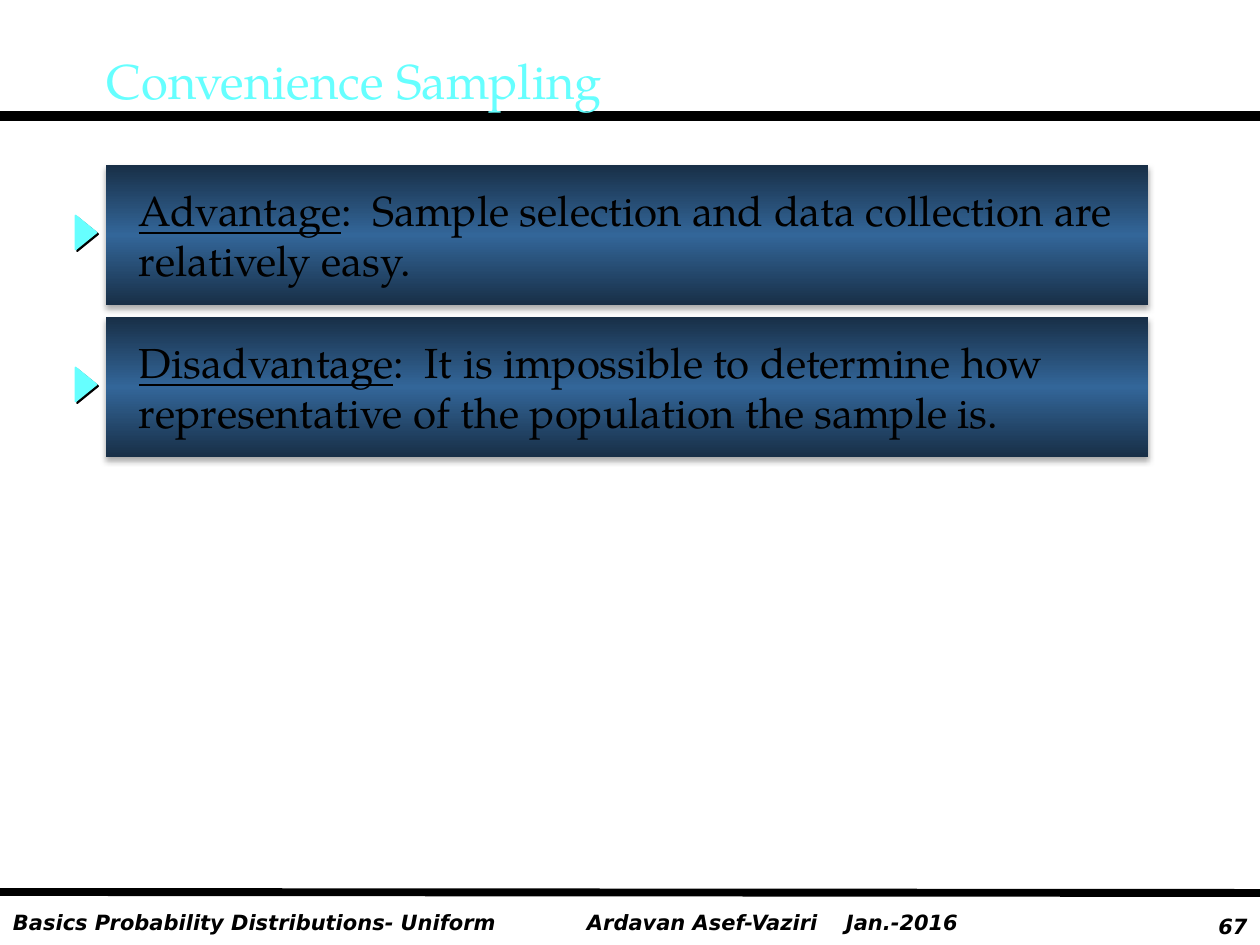
from copy import deepcopy
from dataclasses import dataclass

from lxml.etree import SubElement
from pptx import Presentation
from pptx.dml.color import RGBColor
from pptx.enum.shapes import MSO_CONNECTOR, MSO_SHAPE
from pptx.enum.text import MSO_ANCHOR, PP_ALIGN
from pptx.oxml.ns import qn
from pptx.util import Emu, Pt

WIDE, HIGH = 1260, 945


def px(count):
    return Emu(round(count * 914400 / 126))


@dataclass(frozen=True)
class Theme:
    black: str = "000000"
    cyan: str = "66FFFF"
    blue: str = "336699"
    navy: str = "182F47"
    serif: str = "TeX Gyre Pagella"
    sans: str = "DejaVu Sans"
    title: int = 28
    body: int = 24
    foot: int = 12


def write(frame, *parts, font, size, color, bold=False, align=PP_ALIGN.LEFT,
          anchor=MSO_ANCHOR.TOP, left=13, tab=None):
    """Fill a frame with one paragraph; a part is text or (text, underline)."""
    frame.word_wrap = True
    frame.vertical_anchor = anchor
    frame.margin_left = px(left)
    para = frame.paragraphs[0]
    para.alignment = align
    if tab:
        stops = SubElement(para._p.get_or_add_pPr(), qn("a:tabLst"))
        SubElement(stops, qn("a:tab"), pos=str(px(tab)), algn="l")
    for part in parts:
        text, under = (part, False) if isinstance(part, str) else part
        run = para.add_run()
        run.text = text
        face = run.font
        face.name, face.size = font, Pt(size)
        face.bold = face.italic = bold
        face.underline = under
        face.color.rgb = RGBColor.from_string(color)


class Deck:
    def __init__(self, theme):
        self.theme = theme
        self.show = Presentation()
        self.show.slide_width, self.show.slide_height = px(WIDE), px(HIGH)
        self.slide = self.show.slides.add_slide(self.show.slide_layouts[6])

    def shade(self, shape, alpha, blur, dist, angle):
        shape.shadow.inherit = False
        effects = shape._element.spPr.find(qn("a:effectLst"))
        outer = SubElement(effects, qn("a:outerShdw"), blurRad=str(Pt(blur)),
                           dist=str(Pt(dist)), dir=str(angle * 60000),
                           rotWithShape="0")
        color = SubElement(outer, qn("a:srgbClr"), val=self.theme.black)
        SubElement(color, qn("a:alpha"), val=str(alpha * 1000))

    def label(self, box, *parts, **style):
        shape = self.slide.shapes.add_textbox(*map(px, box))
        write(shape.text_frame, *parts, **style)

    def rule(self, start, end, width):
        line = self.slide.shapes.add_connector(
            MSO_CONNECTOR.STRAIGHT, *map(px, (*start, *end)))
        line.line.color.rgb = RGBColor.from_string(self.theme.black)
        line.line.width = Pt(width)
        SubElement(line._element.spPr, qn("a:effectLst"))

    def panel(self, box, *parts):
        theme = self.theme
        shape = self.slide.shapes.add_shape(MSO_SHAPE.RECTANGLE, *map(px, box))
        shape.line.fill.background()
        shape.fill.gradient()
        shape.fill.gradient_angle = 90
        stops = next(shape._element.spPr.iter(qn("a:gsLst")))
        stops.append(deepcopy(stops[0]))
        colors = (theme.navy, theme.blue, theme.navy)
        for step, (stop, color) in enumerate(
                zip(shape.fill.gradient_stops, colors)):
            stop.position = step / 2
            stop.color.rgb = RGBColor.from_string(color)
        self.shade(shape, 32, 3.5, 2.2, 90)
        write(shape.text_frame, *parts, font=theme.serif, size=theme.body,
              color=theme.black, anchor=MSO_ANCHOR.MIDDLE, left=33)

    def marker(self, box):
        shape = self.slide.shapes.add_shape(
            MSO_SHAPE.ISOSCELES_TRIANGLE, *map(px, box))
        shape.rotation = 90
        color = RGBColor.from_string(self.theme.cyan)
        shape.fill.solid()
        shape.fill.fore_color.rgb = color
        shape.line.color.rgb = color
        shape.line.width = Pt(1)
        self.shade(shape, 100, 0, 1.4, 45)


def main():
    theme = Theme()
    deck = Deck(theme)

    # Footer
    foot = dict(font=theme.sans, size=theme.foot, color=theme.black, bold=True)
    deck.label((1166, 907, 94, 38), "67", align=PP_ALIGN.RIGHT, **foot)
    deck.label((574, 903, 422, 38), "Ardavan Asef-Vaziri\tJan.-2016",
               tab=259, **foot)
    deck.label((0, 903, 588, 38), "Basics Probability Distributions- Uniform",
               **foot)

    # Rules under the title and above the footer
    deck.rule((0, 116), (WIDE, 116), 6)
    deck.rule((0, 892), (WIDE, 893), 4.5)

    # Panels with their markers
    points = (
        ("Advantage", "Sample selection and data collection are "
                      "relatively easy."),
        ("Disadvantage", "It is impossible to determine how "
                         "representative of the population the sample is."),
    )
    for row, (term, text) in enumerate(points):
        top = 165 + 152 * row
        deck.panel((106, top, 1042, 140), (term, True), f":  {text}")
        deck.marker((69, top + 57, 34, 21))

    # Title
    deck.label((94, 38, 1071, 83), "Convenience Sampling", font=theme.serif,
               size=theme.title, color=theme.cyan, anchor=MSO_ANCHOR.MIDDLE)

    deck.show.save("out.pptx")


if __name__ == "__main__":
    main()
